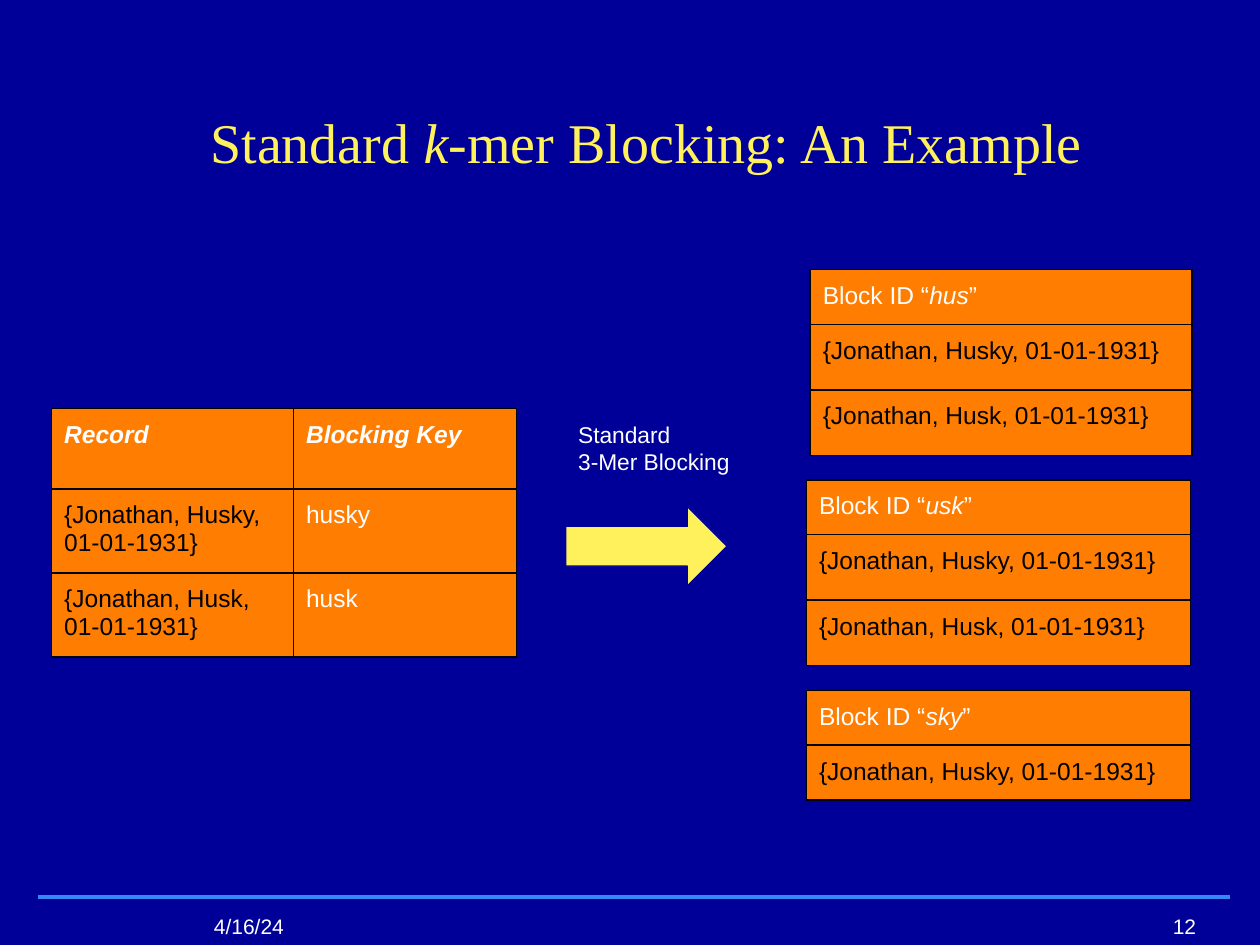
from pptx import Presentation
from pptx.dml.color import RGBColor
from pptx.enum.shapes import MSO_CONNECTOR as Connector, MSO_SHAPE as Shape
from pptx.enum.text import MSO_ANCHOR as Anchor, MSO_AUTO_SIZE as AutoSize, PP_ALIGN as Align
from pptx.oxml import parse_xml
from pptx.oxml.ns import nsdecls
from pptx.util import Inches, Pt

NAVY, ORANGE, YELLOW = "000099", "FF7D00", "FFF15B"
WHITE, BLACK, BLUE = "FFFFFF", "000000", "3587F5"

HUSKY = "{Jonathan, Husky, 01-01-1931}"
HUSK = "{Jonathan, Husk, 01-01-1931}"


def rgb(value):
    return RGBColor.from_string(value)


def box(*lengths):
    return [Inches(length) for length in lengths]


def add_run(paragraph, text, size, color, font="Arial", bold=False, italic=False):
    run = paragraph.add_run()
    run.text = text
    run.font.name = font
    run.font.size = Pt(size)
    run.font.color.rgb = rgb(color)
    run.font.bold = bold
    run.font.italic = italic


def add_title(slide, parts):
    title = slide.shapes.title
    title.left, title.top, title.width, title.height = box(0.47, 0.71, 9.32, 0.63)
    frame = title.text_frame
    frame.auto_size = AutoSize.NONE
    frame.vertical_anchor = Anchor.TOP
    frame.margin_top = Inches(0.14)
    paragraph = frame.paragraphs[0]
    paragraph.alignment = Align.CENTER
    for text, italic in parts:
        add_run(paragraph, text, 32, YELLOW, "Times New Roman", italic=italic)


def add_label(slide, place, lines, size, inset=0.1, wrap=True):
    frame = slide.shapes.add_textbox(*box(*place)).text_frame
    frame.word_wrap = wrap
    frame.margin_top = frame.margin_bottom = Inches(inset)
    for index, line in enumerate(lines):
        paragraph = frame.add_paragraph() if index else frame.paragraphs[0]
        add_run(paragraph, line, size, WHITE)


def add_rule(slide, left, right, top):
    rule = slide.shapes.add_connector(Connector.STRAIGHT, *box(left, top, right, top))
    rule.line.color.rgb = rgb(BLUE)
    rule.line.width = Pt(2.25)
    rule._element.spPr.append(parse_xml(f"<a:effectLst {nsdecls('a')}/>"))


def style_cell(cell):
    properties = cell._tc.get_or_add_tcPr()
    for side in ("lnL", "lnR", "lnT", "lnB"):
        properties.append(parse_xml(
            f'<a:{side} {nsdecls("a")} w="{Pt(1)}"><a:solidFill>'
            f'<a:srgbClr val="{BLACK}"/></a:solidFill></a:{side}>'))
    cell.fill.solid()
    cell.fill.fore_color.rgb = rgb(ORANGE)
    cell.margin_left = cell.margin_right = Inches(0.1)
    cell.margin_top = cell.margin_bottom = Inches(0.1)


def add_records(slide, left, top, widths, heights, rows):
    place = box(left, top, sum(widths), sum(heights))
    table = slide.shapes.add_table(len(rows), len(widths), *place).table
    table.horz_banding = False
    for column, width in zip(table.columns, widths):
        column.width = Inches(width)
    for row, height, contents in zip(table.rows, heights, rows):
        row.height = Inches(height)
        for cell, (color, bold, parts) in zip(row.cells, contents):
            style_cell(cell)
            for text, italic in parts:
                add_run(cell.text_frame.paragraphs[0], text, 14, color, bold=bold, italic=italic)


def heading(text):
    return WHITE, True, [(text, True)]


def record(text):
    return BLACK, False, [(text, False)]


def key(text):
    return WHITE, False, [(text, False)]


def add_block(slide, left, top, width, kmer, records, height):
    block_id = WHITE, False, [("Block ID “", False), (kmer, True), ("”", False)]
    heights = [0.42] + [height] * len(records)
    rows = [[block_id]] + [[record(text)] for text in records]
    add_records(slide, left, top, [width], heights, rows)


def add_arrow(slide):
    arrow = slide.shapes.add_shape(Shape.RIGHT_ARROW, *box(4.49, 4.02, 1.28, 0.63))
    arrow.shadow.inherit = False
    arrow.fill.solid()
    arrow.fill.fore_color.rgb = rgb(YELLOW)
    arrow.line.color.rgb = rgb(NAVY)
    arrow.line.width = Pt(0.75)


def main():
    deck = Presentation()
    deck.slide_width, deck.slide_height = box(10, 7.5)
    slide = deck.slides.add_slide(deck.slide_layouts[5])
    slide.background.fill.solid()
    slide.background.fill.fore_color.rgb = rgb(NAVY)

    add_rule(slide, 0.3, 9.76, 7.12)
    add_label(slide, (1.6, 7.2, 0.94, 0.3), ["4/16/24"], 12, 0.05, False)
    add_label(slide, (9.21, 7.2, 0.4, 0.3), ["12"], 12, 0.05, False)
    add_title(slide, [("Standard ", False), ("k", True), ("-mer Blocking: An Example", False)])

    add_records(slide, 0.41, 3.24, [1.92, 1.77], [0.64] * 3, [
        [heading("Record"), heading("Blocking Key")],
        [record(HUSKY), key("husky")],
        [record(HUSK), key("husk")],
    ])
    add_block(slide, 6.43, 2.14, 3.03, "hus", [HUSKY, HUSK], 0.52)
    add_block(slide, 6.4, 5.48, 3.05, "sky", [HUSKY], 0.42)
    add_block(slide, 6.4, 3.81, 3.05, "usk", [HUSKY, HUSK], 0.52)

    add_arrow(slide)
    add_label(slide, (4.49, 3.24, 1.41, 0.78), ["Standard", "3-Mer Blocking"], 13)
    deck.save("out.pptx")


if __name__ == "__main__":
    main()
